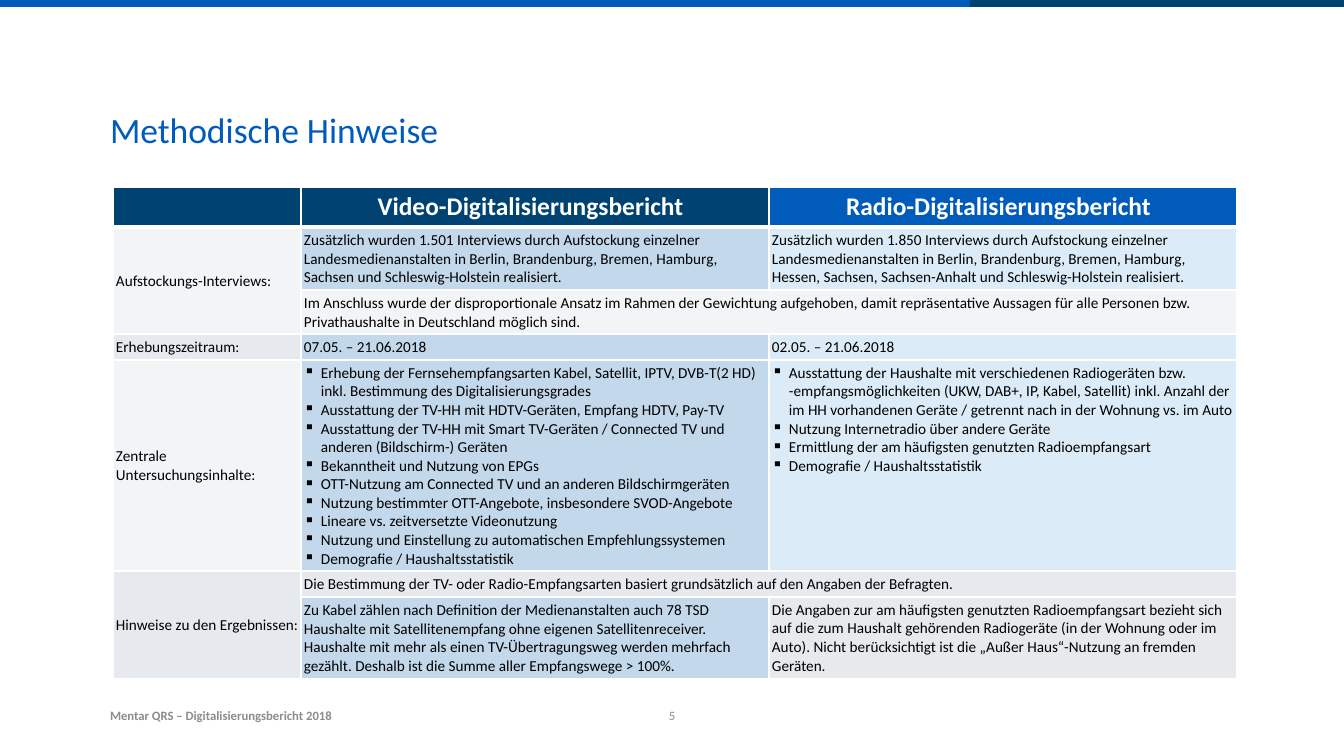
import pptx
import pptx.dml.color
import pptx.enum.shapes
import pptx.enum.text
import pptx.util
from lxml import etree
from pptx.oxml.ns import qn

EMU_PER_PX = 10004
FONT = "Calibri"
COLORS = {
    "blue": "005BBB", "navy": "004372", "white": "FFFFFF", "black": "000000",
    "gray": "8C8C8C", "label": "E6EAEE", "video": "C3D8EB", "radio": "B9DAF2",
    "note": "E7E9EB",
}
ALIGN = pptx.enum.text.PP_ALIGN
ANCHOR = pptx.enum.text.MSO_ANCHOR

BANDS = [(0, 970, "blue"), (970, 374, "navy")]
CAPTIONS = [
    ("Methodische Hinweise", (110, 108, 1122, 54), 28, "blue", False, ALIGN.LEFT, ANCHOR.TOP),
    ("Mentar QRS – Digitalisierungsbericht 2018", (110, 702, 382, 21), 10, "gray", True,
     ALIGN.LEFT, ANCHOR.BOTTOM),
    ("5", (657, 700, 30, 23), 10, "gray", False, ALIGN.CENTER, ANCHOR.BOTTOM),
]

VIDEO_TOPICS = [
    "Erhebung der Fernsehempfangsarten Kabel, Satellit, IPTV, DVB-T(2 HD) inkl. Bestimmung des "
    "Digitalisierungsgrades",
    "Ausstattung der TV-HH mit HDTV-Geräten, Empfang HDTV, Pay-TV",
    "Ausstattung der TV-HH mit Smart TV-Geräten / Connected TV und anderen (Bildschirm-) Geräten",
    "Bekanntheit und Nutzung von EPGs",
    "OTT-Nutzung am Connected TV und an anderen Bildschirmgeräten",
    "Nutzung bestimmter OTT-Angebote, insbesondere SVOD-Angebote",
    "Lineare vs. zeitversetzte Videonutzung",
    "Nutzung und Einstellung zu automatischen Empfehlungssystemen",
    "Demografie / Haushaltsstatistik",
]
RADIO_TOPICS = [
    "Ausstattung der Haushalte mit verschiedenen Radiogeräten bzw.\n"
    "-empfangsmöglichkeiten (UKW, DAB+, IP, Kabel, Satellit) inkl. Anzahl der im HH vorhandenen "
    "Geräte / getrennt nach in der Wohnung vs. im Auto",
    "Nutzung Internetradio über andere Geräte",
    "Ermittlung der am häufigsten genutzten Radioempfangsart",
    "Demografie / Haushaltsstatistik",
]
TABLE_LEFT, TABLE_TOP = 113, 187
COLUMNS = [188, 468, 468]
ROWS = [40, 63, 44, 26, 211, 26, 82]
COLUMN_RULES = [1, 1, 2.25, 1]
ROW_RULES = [1, 3, 1, 1.5, 1.5, 1.5, 1.5, 1]
MERGES = [(1, 0, 2, 0), (2, 1, 2, 2), (5, 0, 6, 0), (5, 1, 5, 2)]
HEADER_MARGINS, BODY_MARGINS = (3, 4, 12, 4), (3, 4, 2, 3)
BULLET_INDENT = 17

CELLS = [
    [("", "navy", 100), ("Video-Digitalisierungsbericht", "navy", 100),
     ("Radio-Digitalisierungsbericht", "blue", 100)],
    [("Aufstockungs-Interviews:", "label", 50),
     ("Zusätzlich wurden 1.501 Interviews durch Aufstockung einzelner Landesmedienanstalten in "
      "Berlin, Brandenburg, Bremen, Hamburg, Sachsen und Schleswig-Holstein realisiert.",
      "video", 100),
     ("Zusätzlich wurden 1.850 Interviews durch Aufstockung einzelner Landesmedienanstalten in "
      "Berlin, Brandenburg, Bremen, Hamburg, Hessen, Sachsen, Sachsen-Anhalt und "
      "Schleswig-Holstein realisiert.", "radio", 50)],
    [None,
     ("Im Anschluss wurde der disproportionale Ansatz im Rahmen der Gewichtung aufgehoben, damit "
      "repräsentative Aussagen für alle Personen bzw. Privathaushalte in Deutschland möglich "
      "sind.", "label", 50), None],
    [("Erhebungszeitraum:", "label", 100), ("07.05. – 21.06.2018", "video", 100),
     ("02.05. – 21.06.2018", "radio", 50)],
    [("Zentrale Untersuchungsinhalte:", "label", 50), (VIDEO_TOPICS, "video", 100),
     (RADIO_TOPICS, "radio", 50)],
    [("Hinweise zu den Ergebnissen:", "label", 100),
     ("Die Bestimmung der TV- oder Radio-Empfangsarten basiert grundsätzlich auf den Angaben der "
      "Befragten.", "label", 100), None],
    [None,
     ("Zu Kabel zählen nach Definition der Medienanstalten auch 78 TSD Haushalte mit "
      "Satellitenempfang ohne eigenen Satellitenreceiver. Haushalte mit mehr als einen "
      "TV-Übertragungsweg werden mehrfach gezählt. Deshalb ist die Summe aller Empfangswege "
      "> 100%.", "video", 100),
     ("Die Angaben zur am häufigsten genutzten Radioempfangsart bezieht sich auf die zum Haushalt "
      "gehörenden Radiogeräte (in der Wohnung oder im Auto). Nicht berücksichtigt ist die „Außer "
      "Haus“-Nutzung an fremden Geräten.", "note", 100)],
]


def px(length):
    return pptx.util.Emu(length * EMU_PER_PX)


def rgb(color):
    return pptx.dml.color.RGBColor.from_string(COLORS[color])


def write(paragraph, text, size, color, bold, align):
    paragraph.alignment = align
    for index, line in enumerate(text.split("\n")):
        if index:
            paragraph.add_line_break()
        run = paragraph.add_run()
        run.text = line
        run.font.name = FONT
        run.font.size = pptx.util.Pt(size)
        run.font.bold = bold
        run.font.color.rgb = rgb(color)


def add_bullet(paragraph):
    properties = paragraph._p.get_or_add_pPr()
    properties.set("marL", str(px(BULLET_INDENT)))
    properties.set("indent", str(-px(BULLET_INDENT)))
    etree.SubElement(properties, qn("a:buChar")).set("char", "▪")


def set_borders(cell, row, column):
    right = column + (cell.span_width if cell.is_merge_origin else 1)
    bottom = row + (cell.span_height if cell.is_merge_origin else 1)
    widths = {"a:lnL": COLUMN_RULES[column], "a:lnR": COLUMN_RULES[right],
              "a:lnT": ROW_RULES[row], "a:lnB": ROW_RULES[bottom]}
    properties = cell._tc.get_or_add_tcPr()
    for tag, width in widths.items():
        border = etree.SubElement(properties, qn(tag), w=str(pptx.util.Pt(width)))
        fill = etree.SubElement(border, qn("a:solidFill"))
        etree.SubElement(fill, qn("a:srgbClr"), val=COLORS["white"])


def set_fill(cell, color, opacity):
    cell.fill.solid()
    cell.fill.fore_color.rgb = rgb(color)
    if opacity < 100:
        shade = cell._tc.tcPr.find(qn("a:solidFill")).find(qn("a:srgbClr"))
        etree.SubElement(shade, qn("a:alpha")).set("val", str(opacity * 1000))


def fill_cell(cell, row, column, content, color, opacity):
    header = row == 0
    margins = HEADER_MARGINS if header else BODY_MARGINS
    cell.margin_left, cell.margin_top, cell.margin_right, cell.margin_bottom = map(px, margins)
    set_borders(cell, row, column)
    set_fill(cell, color, opacity)
    bulleted = isinstance(content, list)
    top = header or bulleted or color == "note"
    cell.vertical_anchor = ANCHOR.TOP if top else ANCHOR.MIDDLE
    style = (20, "white", True, ALIGN.CENTER) if header else (12, "black", False, ALIGN.LEFT)
    for index, text in enumerate(content if bulleted else [content]):
        frame = cell.text_frame
        paragraph = frame.add_paragraph() if index else frame.paragraphs[0]
        if bulleted:
            add_bullet(paragraph)
        if text:
            write(paragraph, text, *style)


def main():
    deck = pptx.Presentation()
    deck.slide_width, deck.slide_height = px(1344), px(756)
    slide = deck.slides.add_slide(deck.slide_layouts[6])

    for left, width, color in BANDS:
        band = slide.shapes.add_shape(
            pptx.enum.shapes.MSO_SHAPE.RECTANGLE, px(left), 0, px(width), px(7))
        band.shadow.inherit = False
        band.fill.solid()
        band.fill.fore_color.rgb = rgb(color)
        band.line.fill.background()

    for text, box, size, color, bold, align, anchor in CAPTIONS:
        frame = slide.shapes.add_textbox(*map(px, box)).text_frame
        frame.word_wrap = True
        frame.vertical_anchor = anchor
        frame.margin_left = frame.margin_top = frame.margin_right = frame.margin_bottom = 0
        write(frame.paragraphs[0], text, size, color, bold, align)

    table = slide.shapes.add_table(
        len(ROWS), len(COLUMNS), px(TABLE_LEFT), px(TABLE_TOP),
        px(sum(COLUMNS)), px(sum(ROWS))).table
    table.horz_banding = False
    for column, width in zip(table.columns, COLUMNS):
        column.width = px(width)
    for row, height in zip(table.rows, ROWS):
        row.height = px(height)
    for top, left, bottom, right in MERGES:
        table.cell(top, left).merge(table.cell(bottom, right))
    for row, entries in enumerate(CELLS):
        for column, entry in enumerate(entries):
            if entry:
                fill_cell(table.cell(row, column), row, column, *entry)

    deck.save("out.pptx")


if __name__ == "__main__":
    main()
